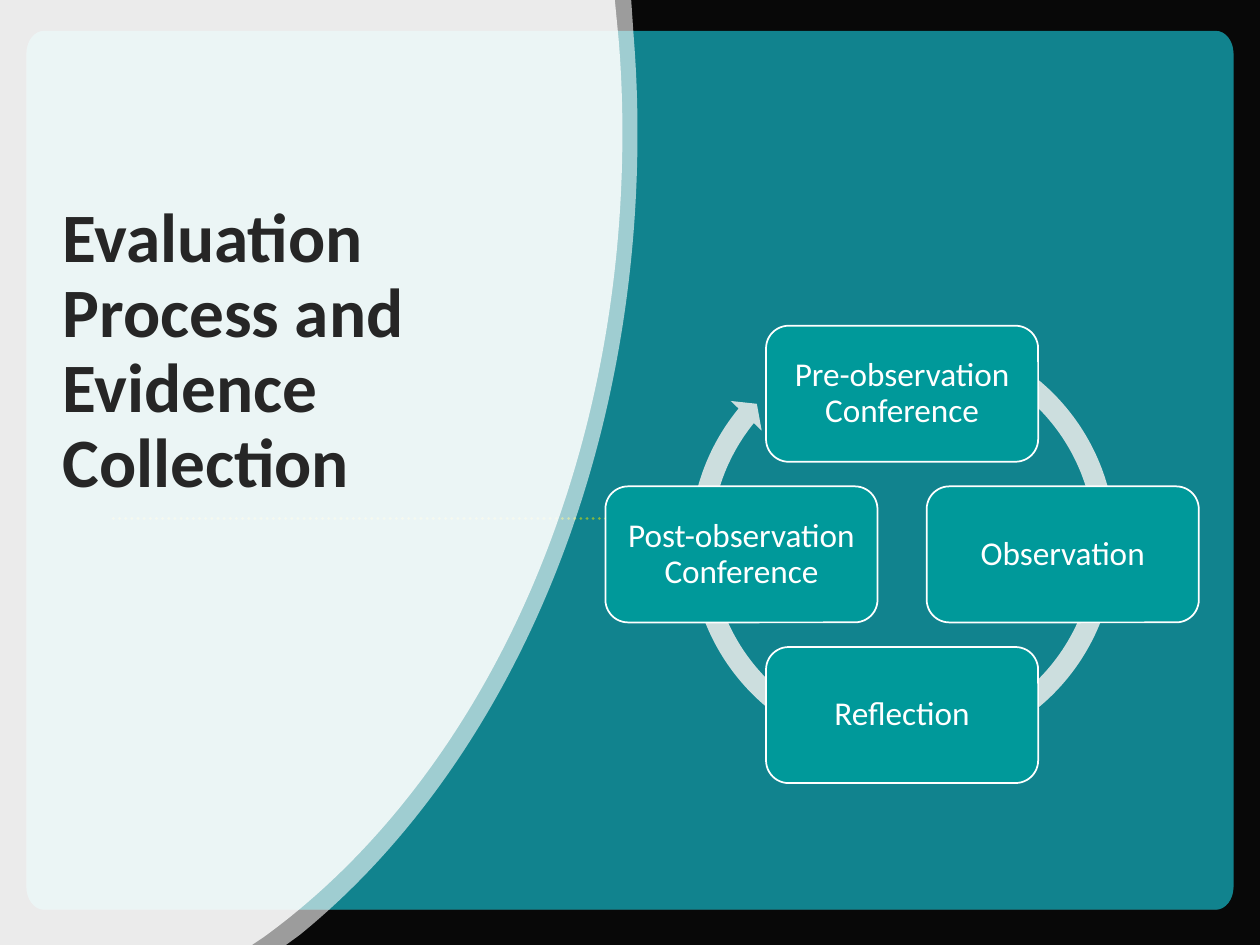
from dataclasses import dataclass

from lxml import etree
from pptx import Presentation
from pptx import util as u
from pptx.dml.color import RGBColor
from pptx.enum import dml, shapes, text
from pptx.oxml.ns import qn

COLORS = {
    "background": "454545", "frame": "000000", "panel": "0099A7",
    "rule": "83B641", "wave": "FFFFFF", "title": "262626",
    "arrow": "CCDEDE", "box": "00999A", "light": "FFFFFF",
}
FONT = "Calibri"
COLUMNS, ROWS = 100, 75  # square grid cells on a 10 x 7.5 inch slide
CELL = u.Inches(0.1)


@dataclass(frozen=True)
class Step:
    label: str
    column: int  # offset from the cycle's centre, in strides
    row: int


@dataclass(frozen=True)
class Wave:
    # Two numbers make a line, six make a Bezier curve
    edge: list
    opacity: int


STEPS = [
    Step("Pre-observation Conference", 0, -1),
    Step("Observation", 1, 0),
    Step("Reflection", 0, 1),
    Step("Post-observation Conference", -1, 0),
]
WAVES = [
    Wave([(50.1, 0), (50.3, 2.9), (50.5, 5.4, 50.6, 8, 50.6, 10.5),
          (50.6, 37.5, 39.9, 61.1, 23.8, 74.2), (22.7, ROWS)], 60),
    Wave([(48.8, 0), (49.1, 3.1), (49.3, 5.5, 49.4, 8, 49.4, 10.5),
          (49.4, 38.1, 37.9, 62.1, 20.9, 74.4), (20, ROWS)], 80),
]
CYCLE_CENTER = (71.6, 44)
STRIDE = 12.75
BOX_SIZE = (21.6, 10.8)


def cells(count: float) -> int:
    return round(count * CELL)


def color(name: str) -> RGBColor:
    return RGBColor.from_string(COLORS[name])


def paint(shape, name: str, opacity: int = 100) -> None:
    """Flat fill without outline or shadow."""
    shape.shadow.inherit = False
    shape.fill.solid()
    shape.fill.fore_color.rgb = color(name)
    shape.line.fill.background()
    if opacity < 100:
        node = shape.fill._xPr.find(qn("a:solidFill"))[0]
        etree.SubElement(node, qn("a:alpha")).set("val", str(opacity * 1000))


def rounded_outline(left, top, right, bottom, radius_x, radius_y) -> list:
    """Rectangle with curved corners, clockwise from the top left."""
    near_x, far_x = left + radius_x, right - radius_x
    near_y, far_y = top + radius_y, bottom - radius_y
    pull_x, pull_y = radius_x * 0.55, radius_y * 0.55
    return [
        (near_x, top), (far_x, top),
        (far_x + pull_x, top, right, near_y - pull_y, right, near_y), (right, far_y),
        (right, far_y + pull_y, far_x + pull_x, bottom, far_x, bottom), (near_x, bottom),
        (near_x - pull_x, bottom, left, far_y + pull_y, left, far_y), (left, near_y),
        (left, near_y - pull_y, near_x - pull_x, top, near_x, top),
    ]


def add_outline(slide, contours: list, name: str, opacity: int) -> None:
    """Freeform from contours; six-number segments become curves."""
    ends = [[(cells(s[-2]), cells(s[-1])) for s in contour] for contour in contours]
    builder = slide.shapes.build_freeform(*ends[0][0], scale=1.0)
    builder.add_line_segments(ends[0][1:], close=True)
    for contour in ends[1:]:
        builder.move_to(*contour[0])
        builder.add_line_segments(contour[1:], close=True)
    shape = builder.convert_to_shape()
    paint(shape, name, opacity)

    drawn = [node for node in shape._element.iter(qn("a:moveTo"), qn("a:lnTo"))]
    segments = [segment for contour in contours for segment in contour]
    for node, segment in zip(drawn, segments):
        if len(segment) == 6:
            node.tag = qn("a:cubicBezTo")
            for index, (x, y) in enumerate((segment[:2], segment[2:4])):
                point = etree.Element(qn("a:pt"))
                point.set("x", str(cells(x) - shape.left))
                point.set("y", str(cells(y) - shape.top))
                node.insert(index, point)


def add_rule(slide, left: float, right: float, row: float) -> None:
    rule = slide.shapes.add_connector(shapes.MSO_CONNECTOR.STRAIGHT, cells(left),
                                      cells(row), cells(right), cells(row))
    rule.line.color.rgb = color("rule")
    rule.line.width = u.Pt(1.75)
    rule.line.dash_style = dml.MSO_LINE.ROUND_DOT
    rule._element.spPr.find(qn("a:ln")).set("cap", "rnd")
    etree.SubElement(rule._element.spPr, qn("a:effectLst"))


def write(shape, words: str, size: float, name: str, align, bold: bool = False) -> None:
    frame = shape.text_frame
    frame.text = words
    frame.word_wrap = True
    paragraph = frame.paragraphs[0]
    paragraph.alignment = align
    paragraph.line_spacing = 0.9
    paragraph.space_before = u.Pt(0)
    font = paragraph.runs[0].font
    font.name, font.size, font.bold = FONT, u.Pt(size), bold
    font.color.rgb = color(name)


def add_title(slide) -> None:
    title = slide.shapes.title
    title.left, title.top, title.width, title.height = map(cells, (3.95, 9.6, 44, 30.75))
    write(title, "Evaluation Process and Evidence Collection", 39.6, "title",
          text.PP_ALIGN.LEFT, bold=True)
    title.text_frame.auto_size = text.MSO_AUTO_SIZE.NONE
    title.text_frame.vertical_anchor = text.MSO_ANCHOR.BOTTOM
    title._element.getparent().append(title._element)  # above the waves


def add_cycle_arrow(slide) -> None:
    arrow = slide.shapes.add_shape(shapes.MSO_SHAPE.CIRCULAR_ARROW,
                                   *map(cells, (53.9, 25.4, 35.5, 35.5)))
    for index, value in enumerate((0.047, 2.729, 131.541, 178.149, 0.048)):
        arrow.adjustments[index] = value
    paint(arrow, "arrow")


def add_step(slide, step: Step) -> None:
    width, height = BOX_SIZE
    left = CYCLE_CENTER[0] + step.column * STRIDE - width / 2
    top = CYCLE_CENTER[1] + step.row * STRIDE - height / 2
    box = slide.shapes.add_shape(shapes.MSO_SHAPE.ROUNDED_RECTANGLE,
                                 *map(cells, (left, top, width, height)))
    paint(box, "box")
    box.line.color.rgb = color("light")
    box.line.width = u.Pt(1)
    write(box, step.label, 19, "light", text.PP_ALIGN.CENTER)
    frame = box.text_frame
    frame.vertical_anchor = text.MSO_ANCHOR.MIDDLE
    frame.margin_left = frame.margin_right = cells(0.8)
    frame.margin_top = frame.margin_bottom = cells(0.8)


def main() -> None:
    presentation = Presentation()
    presentation.slide_width, presentation.slide_height = cells(COLUMNS), cells(ROWS)
    slide = presentation.slides.add_slide(presentation.slide_layouts[5])
    slide.background.fill.solid()
    slide.background.fill.fore_color.rgb = color("background")

    # Dark frame around the teal panel
    panel = rounded_outline(2.1, 2.45, 97.9, 72.2, 1.4, 1.8)
    edge = [(0, 0), (0, ROWS), (COLUMNS, ROWS), (COLUMNS, 0)]
    add_outline(slide, [edge, panel], "frame", 87)
    add_outline(slide, [panel], "panel", 75)
    add_rule(slide, 9, 50, 41.15)

    # Translucent waves and the title on them
    for wave in WAVES:
        add_outline(slide, [[(0, 0), *wave.edge, (0, ROWS)]], "wave", wave.opacity)
    add_title(slide)

    # Observation cycle
    add_cycle_arrow(slide)
    for step in STEPS:
        add_step(slide, step)
    presentation.save("out.pptx")


if __name__ == "__main__":
    main()
